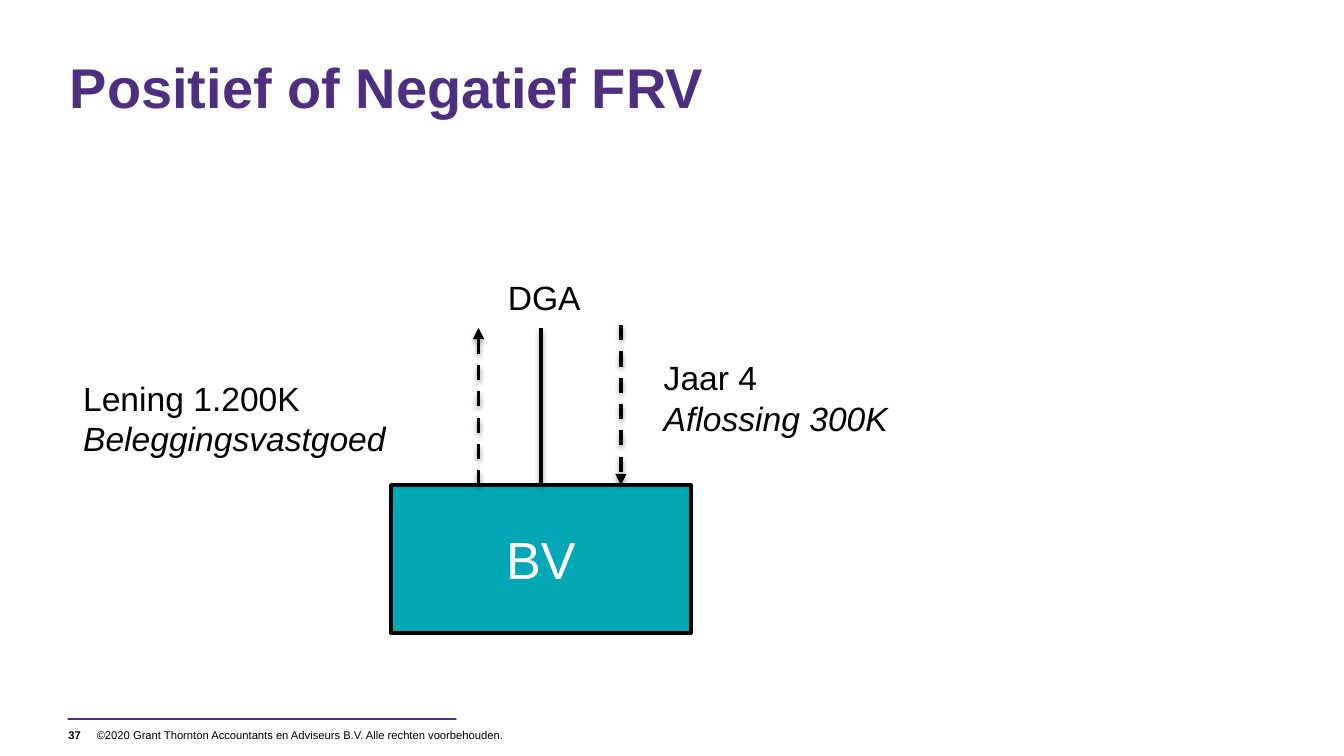
from lxml import etree
from pptx import Presentation
from pptx.dml.color import RGBColor
from pptx.enum import dml, shapes, text
from pptx.oxml import ns, parse_xml
from pptx.util import Inches, Pt

PURPLE = RGBColor(0x4F, 0x2D, 0x7F)
TEAL = RGBColor(0x00, 0xA7, 0xB5)
BLACK = RGBColor(0, 0, 0)
WHITE = RGBColor(255, 255, 255)
FONT = "Arial"
TOP, MIDDLE = text.MSO_ANCHOR.TOP, text.MSO_ANCHOR.MIDDLE

FRAMED_TEXTS = [
    ("©2020 Grant Thornton Accountants en Adviseurs B.V. Alle rechten voorbehouden.",
     (0.72, 5.37, 3.29, 0.2), 6, BLACK, False, MIDDLE, (0, 0.05)),
    ("Positief of Negatief FRV", (0.52, 0.39, 8.97, 0.92), 30, PURPLE, True, TOP, (0, 0)),
    ("37", (0.51, 5.37, 0.2, 0.2), 6, BLACK, True, MIDDLE, (0, 0)),
]
LABELS = [
    (("Lening 1.200K", "Beleggingsvastgoed"), (0.52, 2.76, 2.95, 0.71)),
    (("DGA",), (3.68, 2.01, 1.11, 0.4)),
    (("Jaar 4", "Aflossing 300K"), (4.84, 2.61, 2.32, 0.71)),
]
LABEL_INSETS = (0.1, 0.05)
COMPANY = (2.91, 3.61, 2.23, 1.1)
COMPANY_TOP = COMPANY[1]
COMPANY_MIDDLE = COMPANY[0] + COMPANY[2] / 2
LOAN = (3.56, COMPANY_TOP, 3.56, 2.44)
OWNERSHIP = (COMPANY_MIDDLE, COMPANY_TOP, COMPANY_MIDDLE, 2.44)
REPAYMENT = (4.62, 2.42, 4.62, COMPANY_TOP)
FOOTER_RULE = (0.51, 5.35, 3.39, 5.35)

SHADOW = (
    f'<a:effectLst {ns.nsdecls("a")}>'
    f'<a:outerShdw blurRad="{Pt(3.1)}" dist="{Pt(1.6)}" dir="5400000" rotWithShape="0">'
    '<a:srgbClr val="000000"><a:alpha val="38000"/></a:srgbClr>'
    '</a:outerShdw></a:effectLst>'
)


def style(para, size, color, bold=False, italic=False):
    para.font.name = FONT
    para.font.size = Pt(size)
    para.font.color.rgb = color
    para.font.bold = bold
    para.font.italic = italic


def add_text(page, lines, place, size, color, bold, anchor, insets):
    box = page.shapes.add_textbox(*map(Inches, place))
    frame = box.text_frame
    frame.word_wrap = True
    frame.vertical_anchor = anchor
    frame.margin_left = frame.margin_right = Inches(insets[0])
    frame.margin_top = frame.margin_bottom = Inches(insets[1])
    for index, line in enumerate(lines):
        para = frame.paragraphs[0] if index == 0 else frame.add_paragraph()
        para.text = line
        style(para, size, color, bold, italic=index > 0)
    return frame


def add_line(page, ends, color, width, arrow=False, shadow=True):
    line = page.shapes.add_connector(shapes.MSO_CONNECTOR.STRAIGHT, *map(Inches, ends))
    line.line.color.rgb = color
    line.line.width = Pt(width)
    properties = line._element.spPr
    outline = properties.find(ns.qn("a:ln"))
    if arrow:
        line.line.dash_style = dml.MSO_LINE.DASH
        etree.SubElement(outline, ns.qn("a:tailEnd"), type="triangle")
    if shadow:
        properties.append(parse_xml(SHADOW))
    else:
        outline.set("cap", "rnd")
        etree.SubElement(properties, ns.qn("a:effectLst"))
    return line


def add_company(page):
    company = page.shapes.add_shape(shapes.MSO_SHAPE.RECTANGLE, *map(Inches, COMPANY))
    company.shadow.inherit = False
    company.fill.solid()
    company.fill.fore_color.rgb = TEAL
    company.line.color.rgb = BLACK
    company.line.width = Pt(2)
    frame = company.text_frame
    frame.vertical_anchor = MIDDLE
    para = frame.paragraphs[0]
    para.text = "BV"
    para.alignment = text.PP_ALIGN.CENTER
    style(para, 28, WHITE)
    return company


def main():
    deck = Presentation()
    deck.slide_width = Inches(10)
    deck.slide_height = deck.slide_width * 9 // 16
    page = deck.slides.add_slide(deck.slide_layouts[6])

    add_line(page, FOOTER_RULE, PURPLE, 1.5, shadow=False)
    for line, *layout in FRAMED_TEXTS:
        add_text(page, [line], *layout)

    company = add_company(page)
    ownership = add_line(page, OWNERSHIP, BLACK, 2)
    ownership.begin_connect(company, 0)
    for ends in (LOAN, REPAYMENT):
        add_line(page, ends, BLACK, 2, arrow=True)
    for lines, place in LABELS:
        frame = add_text(page, lines, place, 18, BLACK, False, TOP, LABEL_INSETS)
        frame.auto_size = text.MSO_AUTO_SIZE.SHAPE_TO_FIT_TEXT

    deck.save("out.pptx")


if __name__ == "__main__":
    main()
